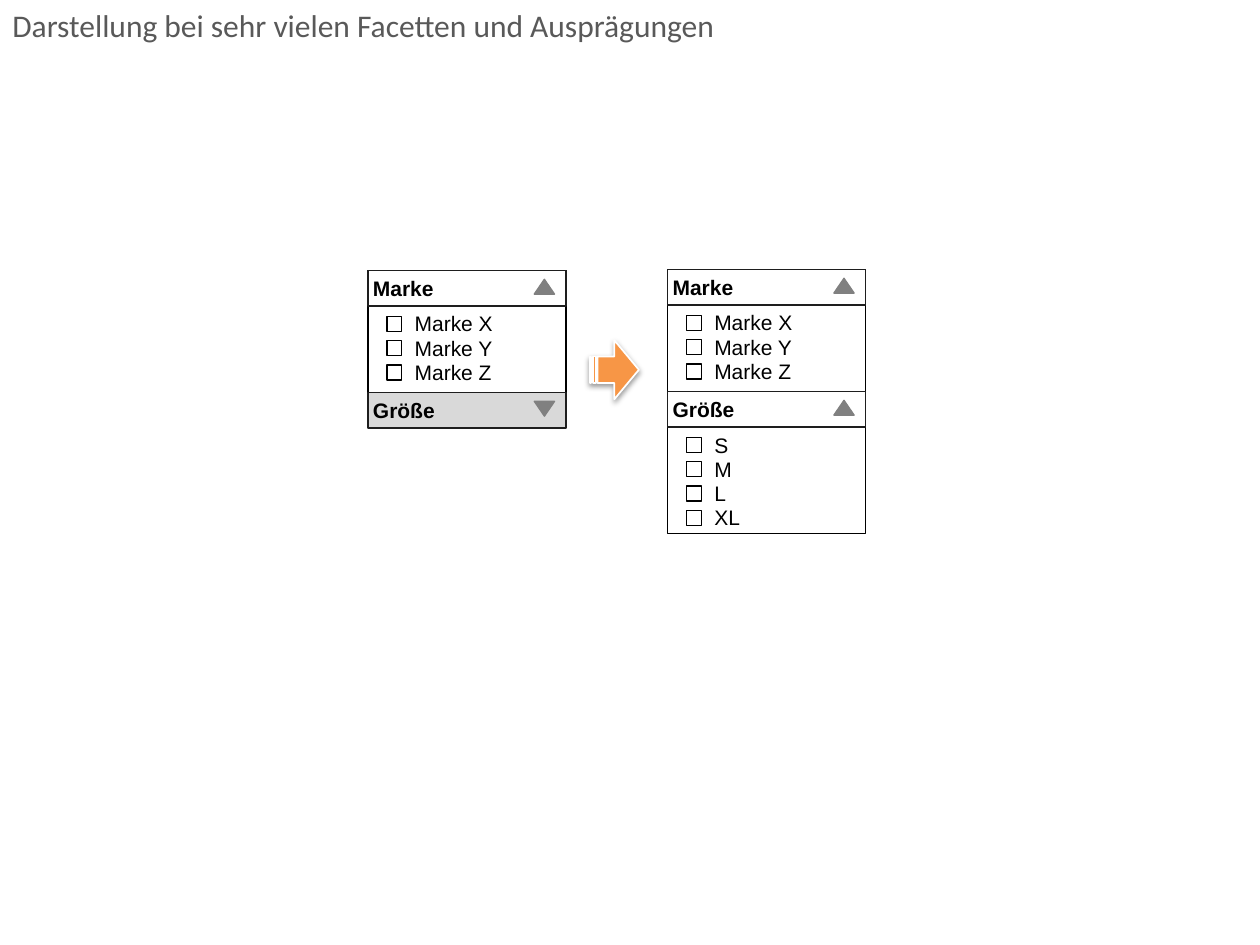
from lxml import etree
from pptx import Presentation
from pptx.dml.color import RGBColor
from pptx.enum.shapes import MSO_SHAPE
from pptx.enum.text import MSO_ANCHOR, MSO_AUTO_SIZE, PP_ALIGN
from pptx.oxml.ns import qn
from pptx.util import Cm, Pt

RECTANGLE = MSO_SHAPE.RECTANGLE
TRIANGLE = MSO_SHAPE.ISOSCELES_TRIANGLE
STRIPED_ARROW = MSO_SHAPE.STRIPED_RIGHT_ARROW
TOP = MSO_ANCHOR.TOP
MIDDLE = MSO_ANCHOR.MIDDLE
LEFT = PP_ALIGN.LEFT
FIT_SHAPE = MSO_AUTO_SIZE.SHAPE_TO_FIT_TEXT
NO_FIT = MSO_AUTO_SIZE.NONE

PANEL_WIDTH = 3.99
HEADER_HEIGHT = 0.71
ROW_PITCH = 0.49
SECTION_PITCH = 2.46
CHECKBOX_SIZE = 0.3
BRANDS = ["Marke X", "Marke Y", "Marke Z"]
SIZES = ["S", "M", "L", "XL"]


def color(value):
    return RGBColor.from_string(value)


def add_box(shapes, kind, left, top, width, height, fill=None, line="000000", weight=0.75):
    shape = shapes.add_shape(kind, Cm(left), Cm(top), Cm(width), Cm(height))
    shape.shadow.inherit = False
    if fill:
        shape.fill.solid()
        shape.fill.fore_color.rgb = color(fill)
    else:
        shape.fill.background()
    shape.line.color.rgb = color(line)
    shape.line.width = Pt(weight)
    return shape


def write_text(shape, text, size=12, font="Arial", ink="000000", bold=False,
               wrap=True, anchor=MIDDLE, margins=(0.1, 0.1), fit=FIT_SHAPE):
    frame = shape.text_frame
    frame.word_wrap = wrap
    frame.auto_size = fit
    frame.vertical_anchor = anchor
    frame.margin_left = frame.margin_right = Cm(margins[0])
    frame.margin_top = frame.margin_bottom = Cm(margins[1])
    paragraph = frame.paragraphs[0]
    paragraph.alignment = LEFT
    run = paragraph.add_run()
    run.text = text
    run.font.size = Pt(size)
    run.font.name = font
    run.font.bold = bold
    run.font.color.rgb = color(ink)


def add_title(slide, left, top, width, height):
    title = slide.shapes.add_textbox(Cm(left), Cm(top), Cm(width), Cm(height))
    write_text(title, "Darstellung bei sehr vielen Facetten und Ausprägungen",
               size=18, font="Calibri", ink="595959", anchor=TOP,
               margins=(0.25, 0.13), fit=NO_FIT)


def add_option(shapes, left, top, label):
    add_box(shapes, RECTANGLE, left + 0.38, top + 0.21, CHECKBOX_SIZE, CHECKBOX_SIZE)
    text_box = shapes.add_textbox(Cm(left + 0.84), Cm(top), Cm(1.8), Cm(HEADER_HEIGHT))
    write_text(text_box, label, wrap=False, anchor=TOP)


def add_section(shapes, left, top, heading, options):
    is_open = bool(options)
    header = add_box(shapes, RECTANGLE, left, top, PANEL_WIDTH, HEADER_HEIGHT,
                     fill=None if is_open else "D9D9D9", line="1E1E1E")
    write_text(header, heading, bold=True)
    triangle = add_box(shapes, TRIANGLE, left + 3.35, top + 0.17, 0.41, 0.3,
                       fill="808080", line="808080")
    triangle.rotation = 0 if is_open else 180
    for row, label in enumerate(options):
        add_option(shapes, left, top + HEADER_HEIGHT + row * ROW_PITCH, label)


def add_panel(slide, left, top, height, sections):
    shapes = slide.shapes.add_group_shape().shapes
    add_box(shapes, RECTANGLE, left, top, PANEL_WIDTH, height)
    for index, (heading, options) in enumerate(sections):
        add_section(shapes, left, top + index * SECTION_PITCH, heading, options)


def add_arrow(slide, left, top, width, height):
    arrow = add_box(slide.shapes, STRIPED_ARROW, left, top, width, height,
                    fill="F79646", line="FFFFFF", weight=1)
    arrow.adjustments[0] = 0.45
    arrow.adjustments[1] = 0.5
    effects = arrow.element.spPr.find(qn("a:effectLst"))
    shadow = etree.SubElement(effects, qn("a:outerShdw"), blurRad=str(Pt(3.1)),
                              dist=str(Pt(1.6)), dir="5400000", rotWithShape="0")
    shade = etree.SubElement(shadow, qn("a:srgbClr"), val="000000")
    etree.SubElement(shade, qn("a:alpha"), val="38000")


def main():
    presentation = Presentation()
    presentation.slide_width = Cm(25.4)
    presentation.slide_height = Cm(19.05)
    slide = presentation.slides.add_slide(presentation.slide_layouts[6])
    add_arrow(slide, 11.89, 6.86, 0.99, 1.19)
    add_panel(slide, 7.42, 5.46, 3.1, [("Marke", BRANDS), ("Größe", [])])
    add_panel(slide, 13.46, 5.44, 5.31, [("Marke", BRANDS), ("Größe", SIZES)])
    add_title(slide, 0, 0, 25.4, 1.73)
    presentation.save("out.pptx")


if __name__ == "__main__":
    main()
